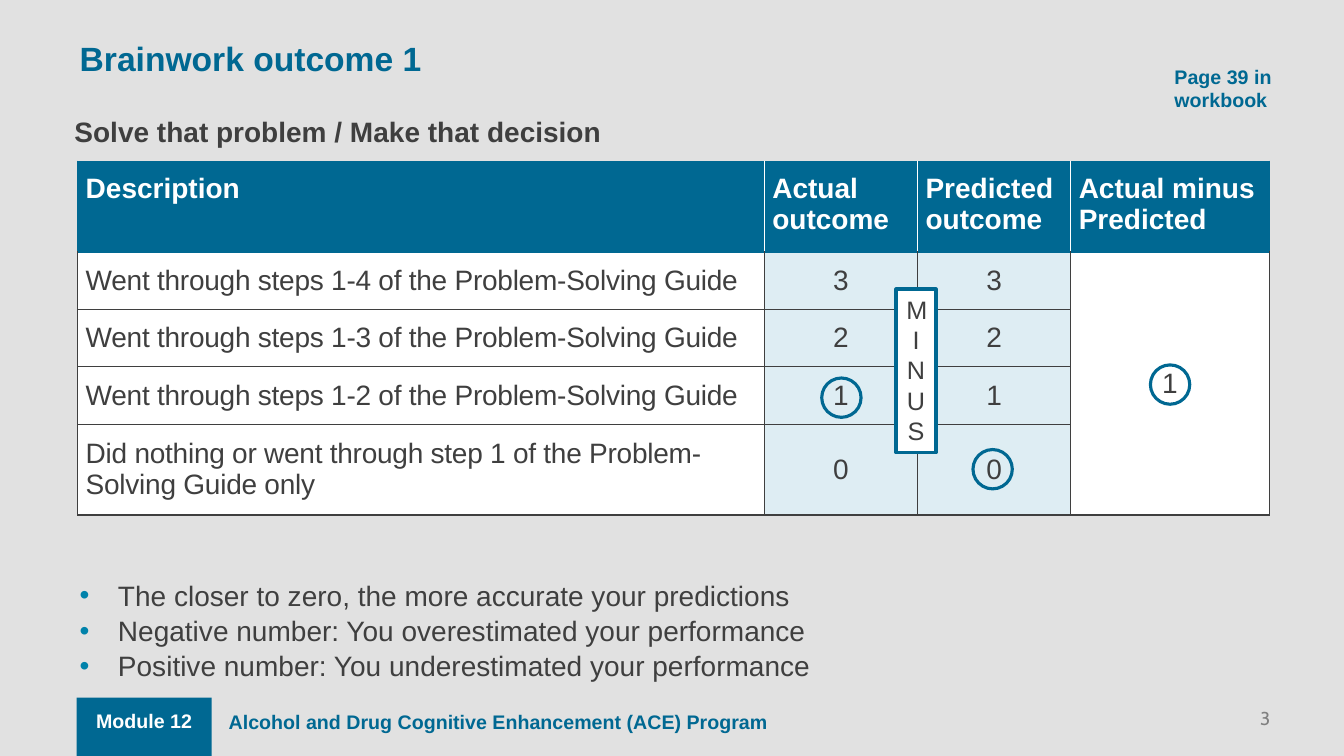
"""Build the Brainwork outcome slide with its scoring table and notes."""
from lxml import etree
from pptx import Presentation
from pptx.dml.color import RGBColor
from pptx.enum.shapes import MSO_SHAPE
from pptx.enum.text import MSO_ANCHOR, PP_ALIGN
from pptx.oxml.ns import qn
from pptx.util import Inches, Pt

LEFT, CENTER, RIGHT = PP_ALIGN.LEFT, PP_ALIGN.CENTER, PP_ALIGN.RIGHT
TOP, MIDDLE = MSO_ANCHOR.TOP, MSO_ANCHOR.MIDDLE
RECTANGLE, OVAL = MSO_SHAPE.RECTANGLE, MSO_SHAPE.OVAL

COLORS = {
    "background": "E1E1E1", "teal": "006892", "bullet": "0082AA", "ink": "3F3F3F",
    "white": "FFFFFF", "pale": "DEEDF3", "gray": "808080",
}

TITLE = "Brainwork outcome 1"
HEADERS = ["Description", "Actual outcome", "Predicted outcome", "Actual minus Predicted"]
OUTCOMES = [
    ("Went through steps 1-4 of the Problem-Solving Guide", "3", "3", "1"),
    ("Went through steps 1-3 of the Problem-Solving Guide", "2", "2", ""),
    ("Went through steps 1-2 of the Problem-Solving Guide", "1", "1", ""),
    ("Did nothing or went through step 1 of the Problem-Solving Guide only", "0", "0", ""),
]
NOTES = [
    "The closer to zero, the more accurate your predictions",
    "Negative number: You overestimated your performance",
    "Positive number: You underestimated your performance",
]
TEAL_LABEL = {"size": 14, "bold": True, "color": "teal"}
LABELS = [
    ("Alcohol and Drug Cognitive Enhancement (ACE) Program", (2.17, 6.99, 11.14, 0.47), TEAL_LABEL),
    ("Solve that problem / Make that decision", (0.64, 1.09, 5.76, 0.44), {"size": 20, "bold": True}),
    ("Page 39 in workbook", (11.55, 0.59, 1.38, 0.57), TEAL_LABEL),
]
PAGE_NUMBER = "3"
COLUMN_WIDTHS = [6.81, 1.52, 1.52, 1.97]
ROW_HEIGHTS = [0.9, 0.57, 0.57, 0.57, 0.9]
COLUMN_FILLS = ["white", "pale", "pale", "white"]
CIRCLE_SIZE = 0.39
CIRCLES = [(9.65, 4.46), (8.15, 3.75), (11.41, 3.62)]


def rgb(name):
    return RGBColor.from_string(COLORS[name])


def write(para, text, size, color="ink", bold=False, name="Arial", align=LEFT):
    para.alignment = align
    span = para.add_run()
    span.text = text
    for key, value in {"name": name, "size": Pt(size), "bold": bold}.items():
        setattr(span.font, key, value)
    span.font.color.rgb = rgb(color)
    return span


def set_frame(frame, margins=(0.1, 0.05, 0.1, 0.05), anchor=TOP):
    frame.word_wrap = True
    frame.vertical_anchor = anchor
    for side, margin in zip(("left", "top", "right", "bottom"), margins):
        setattr(frame, f"margin_{side}", Inches(margin))
    return frame


def add_box(page, place, **options):
    box = page.shapes.add_textbox(*map(Inches, place))
    return set_frame(box.text_frame, **options)


def add_figure(page, kind, place, fill=None, line_width=None):
    figure = page.shapes.add_shape(kind, *map(Inches, place))
    figure.shadow.inherit = False
    if fill:
        figure.fill.solid()
        figure.fill.fore_color.rgb = rgb(fill)
    else:
        figure.fill.background()
    if line_width:
        figure.line.color.rgb = rgb("teal")
        figure.line.width = Pt(line_width)
    else:
        figure.line.fill.background()
    return figure


def set_borders(cell, colors):
    properties = cell._tc.get_or_add_tcPr()
    for index, (side, color) in enumerate(zip("LRTB", colors)):
        line = etree.Element(qn(f"a:ln{side}"), w=str(Pt(1)))
        solid = etree.SubElement(line, qn("a:solidFill"))
        etree.SubElement(solid, qn("a:srgbClr"), val=COLORS[color])
        properties.insert(index, line)


def add_outcome_table(page):
    rows = [HEADERS, *OUTCOMES]
    place = (0.77, 1.6, sum(COLUMN_WIDTHS), sum(ROW_HEIGHTS))
    table = page.shapes.add_table(len(rows), len(HEADERS), *map(Inches, place)).table
    for column, width in zip(table.columns, COLUMN_WIDTHS):
        column.width = Inches(width)
    for row, height in zip(table.rows, ROW_HEIGHTS):
        row.height = Inches(height)
    last = len(HEADERS) - 1
    table.cell(1, last).merge(table.cell(len(rows) - 1, last))
    for r, values in enumerate(rows):
        for c, value in enumerate(values):
            cell = table.cell(r, c)
            header = r == 0
            cell.fill.solid()
            cell.fill.fore_color.rgb = rgb("teal" if header else COLUMN_FILLS[c])
            if header:
                borders = ("white" if c else "teal", "white" if c < last else "teal", "teal", "teal")
            else:
                borders = ("ink", "ink", "teal" if r == 1 else "ink", "ink")
            set_borders(cell, borders)
            cell.vertical_anchor = TOP if header else MIDDLE
            for side, margin in {"left": 0.08, "right": 0.08, "top": 0.12, "bottom": 0.12}.items():
                setattr(cell, f"margin_{side}", Inches(margin))
            if not value:
                continue
            span = write(cell.text_frame.paragraphs[0], value, 20,
                         color="white" if header else "ink", bold=header,
                         align=LEFT if header or c == 0 else CENTER)
            if c == 0 and not header:
                span._r.get_or_add_rPr().set("spc", "-20")


def add_notes_list(page):
    frame = add_box(page, (0.79, 5.74, 11.81, 1.1), margins=(0, 0, 0, 0))
    for index, note in enumerate(NOTES):
        para = frame.add_paragraph() if index else frame.paragraphs[0]
        properties = para._p.get_or_add_pPr()
        properties.set("marL", str(Inches(0.38)))
        properties.set("indent", str(-Inches(0.38)))
        bullet_color = etree.SubElement(properties, qn("a:buClr"))
        etree.SubElement(bullet_color, qn("a:srgbClr"), val=COLORS["bullet"])
        etree.SubElement(properties, qn("a:buFont"), typeface="Arial")
        etree.SubElement(properties, qn("a:buChar"), char="•")
        para.space_after = Pt(1)
        write(para, note, 20)


def main():
    deck = Presentation()
    deck.slide_width, deck.slide_height = Inches(13.33), Inches(7.5)
    page = deck.slides.add_slide(deck.slide_layouts[5])
    page.background.fill.solid()
    page.background.fill.fore_color.rgb = rgb("background")

    title = page.shapes.title
    for key, value in zip(("left", "top", "width", "height"), (0.79, 0.34, 8.92, 0.47)):
        setattr(title, key, Inches(value))
    frame = set_frame(title.text_frame, margins=(0, 0, 0, 0), anchor=MIDDLE)
    write(frame.paragraphs[0], TITLE, 24, color="teal", bold=True)

    module = add_figure(page, RECTANGLE, (0.76, 6.92, 1.34, 0.58), fill="teal")
    frame = set_frame(module.text_frame, margins=(0.1, 0.11, 0.1, 0.05))
    write(frame.paragraphs[0], "Module 12", 14, color="white", bold=True, align=CENTER)

    add_outcome_table(page)
    add_notes_list(page)
    for text, place, style in LABELS:
        write(add_box(page, place).paragraphs[0], text, **style)
    frame = add_box(page, (10.6, 7.01, 2, 0.2), margins=(0, 0, 0, 0))
    write(frame.paragraphs[0], PAGE_NUMBER, 13.3, color="gray", name="Cabin", align=RIGHT)

    minus = add_figure(page, RECTANGLE, (8.89, 2.87, 0.39, 1.62), fill="white", line_width=2.75)
    write(set_frame(minus.text_frame).paragraphs[0], "MINUS", 18, align=CENTER)
    for left, top in CIRCLES:
        add_figure(page, OVAL, (left, top, CIRCLE_SIZE, CIRCLE_SIZE), line_width=2.25)
    deck.save("out.pptx")


if __name__ == "__main__":
    main()
